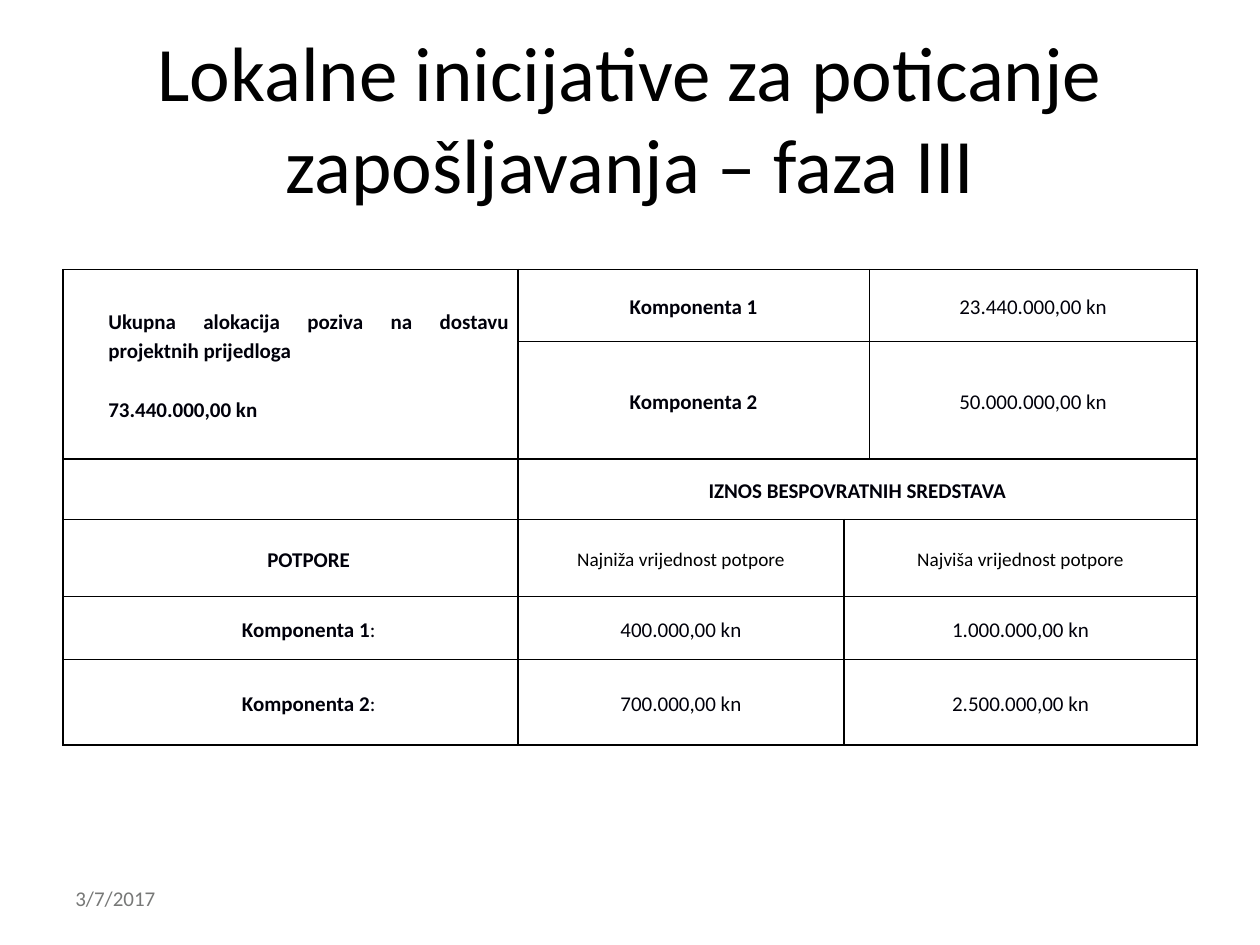
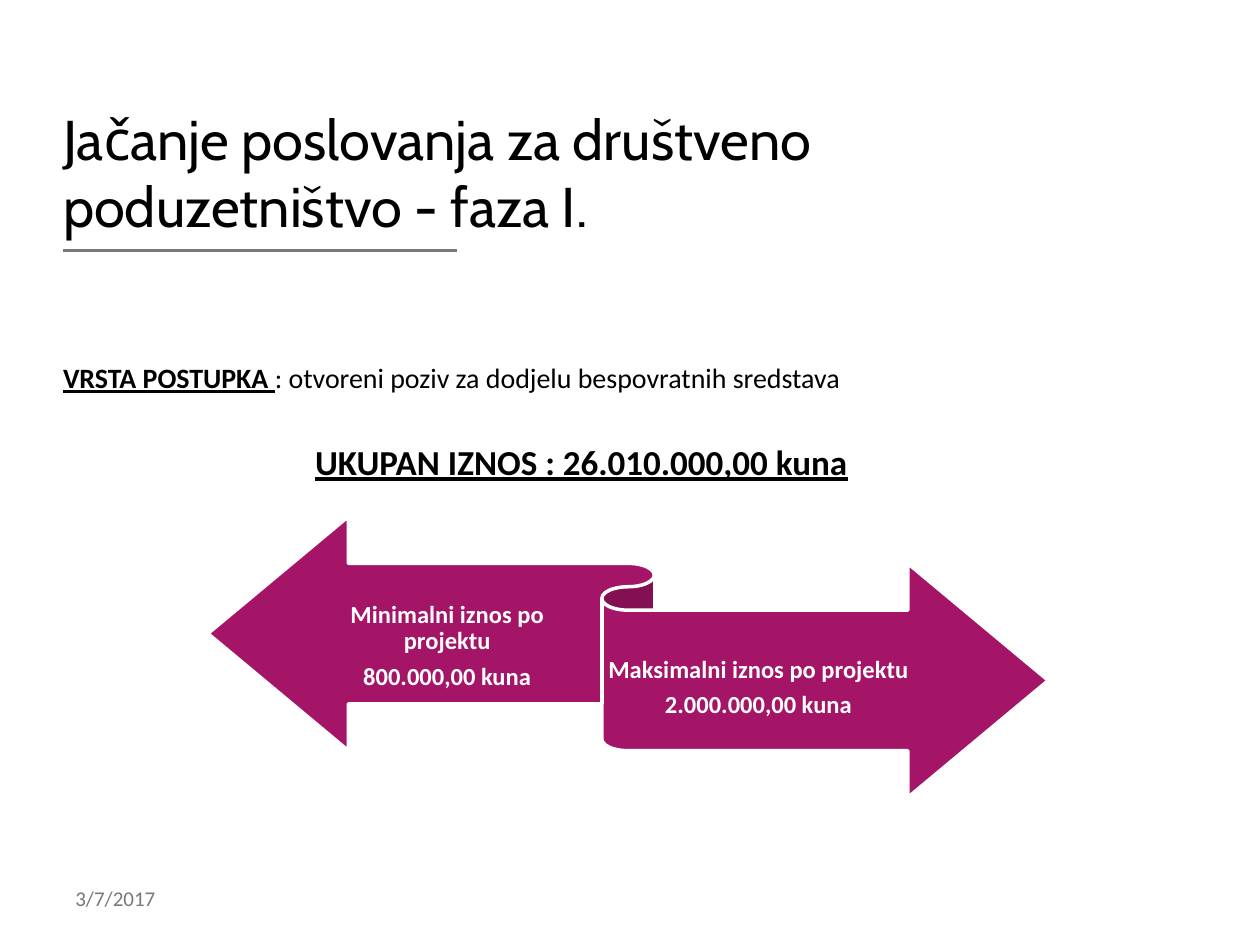
"""Build two slides on grant schemes: an allocation table and a ribbon of project amounts."""
from lxml import etree
from pptx import Presentation
from pptx.dml.color import RGBColor
from pptx.enum import shapes, text
from pptx.oxml import ns
from pptx.util import Inches, Pt

COLORS = {"black": "000000", "ink": "00000A", "grey": "777877",
          "white": "FFFFFF", "magenta": "A41568"}
FONT, TITLE_FONT = "Calibri", "Cabin"
ALIGN, ANCHOR = text.PP_ALIGN, text.MSO_ANCHOR

DATE = ("3/7/2017", (0.5, 6.98, 2.33, 0.4))
TITLES = [
    ("Lokalne inicijative za poticanje zapošljavanja – faza III",
     (0.5, 0.3, 9, 1.25), 44, FONT, ALIGN.CENTER),
    ("Jačanje poslovanja za društveno poduzetništvo - faza I.",
     (0.4, 0.74, 7.91, 1.25), 32, TITLE_FONT, ALIGN.LEFT),
]

BOLD, PLAIN = {"bold": True}, {"bold": False}
SMALL = {"bold": False, "size": 11, "color": "black"}
TABLE_AT = (0.5, 2.14)
COLS = [3.61, 2.79 - 0.2, 0.2, 2.6]
ROWS = [0.57, 0.93, 0.48, 0.61, 0.5, 0.68]
CELLS = [
    (0, 0, 2, 1, [[("Ukupna alokacija poziva na dostavu projektnih prijedloga", BOLD)],
                  [("73.440.000,00 kn", BOLD)]]),
    (0, 1, 1, 2, [[("Komponenta 1", BOLD)]]),
    (0, 3, 1, 1, [[("23.440.000,00 kn", PLAIN)]]),
    (1, 1, 1, 2, [[("Komponenta 2", BOLD)]]),
    (1, 3, 1, 1, [[("50.000.000,00 kn", PLAIN)]]),
    (2, 1, 1, 3, [[("IZNOS BESPOVRATNIH SREDSTAVA", BOLD)]]),
    (3, 0, 1, 1, [[("POTPORE", BOLD)]]),
    (3, 1, 1, 1, [[("Najniža vrijednost potpore", SMALL)]]),
    (3, 2, 1, 2, [[("Najviša vrijednost potpore", SMALL)]]),
    (4, 0, 1, 1, [[("Komponenta 1", BOLD), (":", PLAIN)]]),
    (4, 1, 1, 1, [[("400.000,00 kn", PLAIN)]]),
    (4, 2, 1, 2, [[("1.000.000,00 kn", PLAIN)]]),
    (5, 0, 1, 1, [[("Komponenta 2", BOLD), (":", PLAIN)]]),
    (5, 1, 1, 1, [[("700.000,00 kn", PLAIN)]]),
    (5, 2, 1, 2, [[("2.500.000,00 kn", PLAIN)]]),
]

BODY_AT = (0.4, 2.81, 9.03, 3.52)
BODY = [
    (0, 0, [("VRSTA POSTUPKA ", {"bold": True, "underline": True, "size": 16}),
            (": otvoreni poziv za dodjelu bespovratnih sredstava", {"size": 16})]),
    (2, 26.5, [("UKUPAN IZNOS : 26.010.000,00 kuna",
                {"bold": True, "underline": True, "size": 20})]),
]
RULE = (0.5, 1.99, 3.63, 1.99)
RIBBON_AT = (1.65, 4.1, 6.67, 2.23)
RIBBON_LABELS = [
    ((2.45, 4.33, 2.2, 1.33), 0.33, 0.06, ["Minimalni iznos po projektu", "800.000,00 kuna"]),
    ((4.72, 4.85, 2.6, 1.79), 0.05, 0.62, ["Maksimalni iznos po projektu", "2.000.000,00 kuna"]),
]


def rgb(name):
    return RGBColor.from_string(COLORS[name])


def inches(values):
    return [Inches(v) for v in values]


def add_run(p, words, size=12, color="black", name=FONT, **format_values):
    r = p.add_run()
    r.text = words
    r.font.color.rgb = rgb(color)
    for key, value in {"size": Pt(size), "name": name, **format_values}.items():
        setattr(r.font, key, value)


def paragraphs(tf, count):
    return [tf.paragraphs[0]] + [tf.add_paragraph() for _ in range(count - 1)]


def set_frame(tf, **values):
    for key, value in {"word_wrap": True, "auto_size": text.MSO_AUTO_SIZE.NONE, **values}.items():
        setattr(tf, key, value)


def place(sp, box):
    for key, value in zip(("left", "top", "width", "height"), inches(box)):
        setattr(sp, key, value)


def indent(p, left):
    pPr = p._p.get_or_add_pPr()
    pPr.set("marL", str(Inches(left)))
    pPr.set("indent", "0")


def add_slide(prs, layout, title):
    words, box, size, font, align = title
    s = prs.slides.add_slide(prs.slide_layouts[layout])
    place(s.shapes.title, box)
    tf = s.shapes.title.text_frame
    set_frame(tf, vertical_anchor=ANCHOR.MIDDLE)
    tf.paragraphs[0].alignment = align
    add_run(tf.paragraphs[0], words, size, name=font)
    date, date_box = DATE
    tf = s.shapes.add_textbox(*inches(date_box)).text_frame
    set_frame(tf)
    add_run(tf.paragraphs[0], date, color="grey")
    return s


def style_cell(cell):
    cell.fill.solid()
    cell.fill.fore_color.rgb = rgb("white")
    cell.vertical_anchor = ANCHOR.MIDDLE
    cell.margin_left = cell.margin_right = Inches(0.07)
    cell.margin_top = cell.margin_bottom = 0
    tcPr = cell._tc.get_or_add_tcPr()
    for i, side in enumerate(("lnL", "lnR", "lnT", "lnB")):
        ln = etree.Element(ns.qn("a:" + side), w=str(Pt(1)))
        fill = etree.SubElement(ln, ns.qn("a:solidFill"))
        etree.SubElement(fill, ns.qn("a:srgbClr"), val=COLORS["black"])
        tcPr.insert(i, ln)


def add_allocation_table(s):
    size = (sum(COLS), sum(ROWS))
    table = s.shapes.add_table(len(ROWS), len(COLS), *inches(TABLE_AT + size)).table
    table.first_row = table.horz_banding = False
    for col, width in zip(table.columns, COLS):
        col.width = Inches(width)
    for row, height in zip(table.rows, ROWS):
        row.height = Inches(height)
    for cell in table.iter_cells():
        style_cell(cell)
    for row, col, height, width, lines in CELLS:
        cell = table.cell(row, col)
        if height * width > 1:
            cell.merge(table.cell(row + height - 1, col + width - 1))
        for i, (p, runs) in enumerate(zip(paragraphs(cell.text_frame, len(lines)), lines)):
            p.alignment = ALIGN.JUSTIFY if len(lines) > 1 else ALIGN.CENTER
            p.line_spacing = 1.15
            if i:
                p.space_before = Pt(16.8)
            if col == 0:
                indent(p, 0.29)
            for words, values in runs:
                add_run(p, words, **{"color": "ink", **values})


def add_body(s):
    body = s.placeholders[1]
    place(body, BODY_AT)
    set_frame(body.text_frame)
    for p, (left, before, runs) in zip(paragraphs(body.text_frame, len(BODY)), BODY):
        indent(p, left)
        etree.SubElement(p._p.get_or_add_pPr(), ns.qn("a:buNone"))
        p.space_before = Pt(before)
        for words, values in runs:
            add_run(p, words, **values)


def add_rule(s):
    line = s.shapes.add_connector(shapes.MSO_CONNECTOR.STRAIGHT, *inches(RULE))
    line.line.color.rgb = rgb("grey")
    line.line.width = Pt(2)
    etree.SubElement(line._element.spPr, ns.qn("a:effectLst"))


def add_ribbon(s):
    sp = s.shapes.add_shape(shapes.MSO_SHAPE.LEFT_RIGHT_RIBBON, *inches(RIBBON_AT))
    sp.shadow.inherit = False
    sp.fill.solid()
    sp.fill.fore_color.rgb = rgb("magenta")
    sp.line.color.rgb = rgb("white")
    sp.line.width = Pt(2)
    for box, top, bottom, lines in RIBBON_LABELS:
        tf = s.shapes.add_textbox(*inches(box)).text_frame
        set_frame(tf, vertical_anchor=ANCHOR.MIDDLE, margin_left=0, margin_right=0,
                  margin_top=Inches(top), margin_bottom=Inches(bottom))
        for p, words in zip(paragraphs(tf, len(lines)), lines):
            p.alignment = ALIGN.CENTER
            p.line_spacing = 0.9
            p.space_after = Pt(4.9)
            add_run(p, words, 14, "white", bold=True)


def main():
    prs = Presentation()
    prs.slide_width, prs.slide_height = Inches(10), Inches(7.5)
    add_allocation_table(add_slide(prs, 5, TITLES[0]))
    s = add_slide(prs, 1, TITLES[1])
    add_body(s)
    add_rule(s)
    add_ribbon(s)
    prs.save("out.pptx")


if __name__ == "__main__":
    main()
